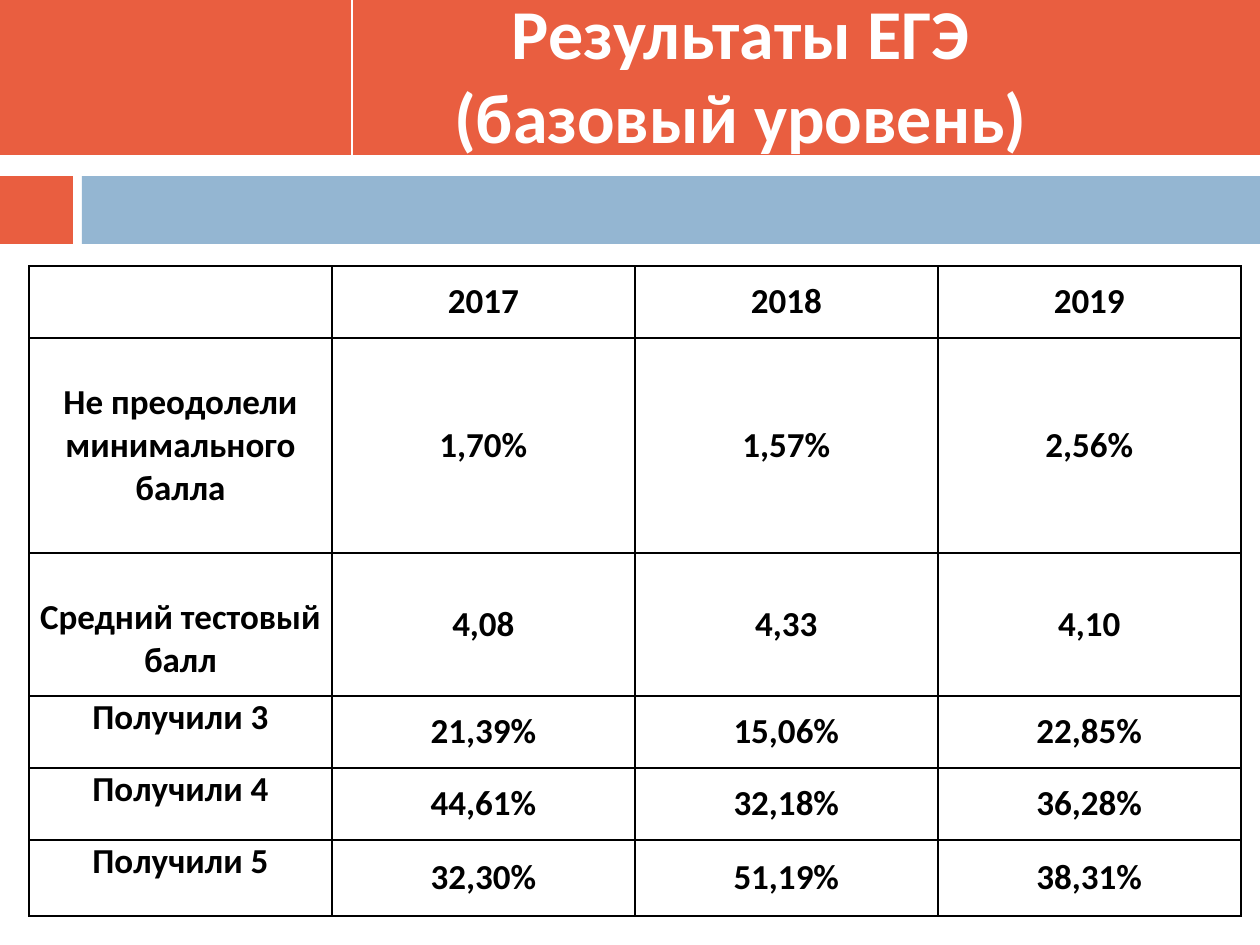
from lxml import etree
from pptx import Presentation
from pptx import util as u
from pptx.dml.color import RGBColor
from pptx.enum import shapes, text
from pptx.oxml import ns

PX = 914400 // 126
ORANGE = RGBColor(0xE9, 0x5E, 0x40)
BLUE = RGBColor(0x94, 0xB6, 0xD2)
WHITE = RGBColor(0xFF, 0xFF, 0xFF)
BLACK = RGBColor(0, 0, 0)


def write(frame, words, size, color):
    para = frame.paragraphs[0]
    para.alignment = text.PP_ALIGN.CENTER
    para.font.size = u.Pt(size)
    if not words:
        return
    span = para.add_run()
    span.text = words
    span.font.name = "Calibri"
    span.font.size = u.Pt(size)
    span.font.bold = True
    span.font.color.rgb = color


def add_borders(cell, color, width):
    props = cell._tc.get_or_add_tcPr()
    for index, side in enumerate(("lnL", "lnR", "lnT", "lnB")):
        line = etree.Element(ns.qn(f"a:{side}"), w=str(u.Pt(width)))
        fill = etree.SubElement(line, ns.qn("a:solidFill"))
        etree.SubElement(fill, ns.qn("a:srgbClr"), val=str(color))
        props.insert(index, line)


deck = Presentation()
deck.slide_width = 1260 * PX
deck.slide_height = 945 * PX
page = deck.slides.add_slide(deck.slide_layouts[6])

# Header bands
bands = [
    (0, 0, 1260, 155, ORANGE),
    (0, 170, 1260, 44, WHITE),
    (0, 176, 73, 68, ORANGE),
    (82, 176, 1178, 68, BLUE),
]
for left, top, width, height, color in bands:
    band = page.shapes.add_shape(
        shapes.MSO_SHAPE.RECTANGLE, left * PX, top * PX, width * PX, height * PX)
    band.shadow.inherit = False
    band.fill.solid()
    band.fill.fore_color.rgb = color
    band.line.fill.background()

# Header divider
divider = page.shapes.add_connector(
    shapes.MSO_CONNECTOR.STRAIGHT, 352 * PX, 0, 352 * PX, 155 * PX)
divider.line.color.rgb = WHITE
divider.line.width = u.Pt(1.5)
etree.SubElement(divider._element.spPr, ns.qn("a:effectLst"))

# Title
title = page.shapes.add_textbox(382 * PX, 6 * PX, 717 * PX, 136 * PX)
title.text_frame.word_wrap = True
title.text_frame.vertical_anchor = text.MSO_ANCHOR.MIDDLE
write(title.text_frame, "Результаты ЕГЭ (базовый уровень)", 40, WHITE)

# Results table
results = [
    ("", "2017", "2018", "2019"),
    ("Не преодолели минимального балла", "1,70%", "1,57%", "2,56%"),
    ("Средний тестовый балл", "4,08", "4,33", "4,10"),
    ("Получили 3", "21,39%", "15,06%", "22,85%"),
    ("Получили 4", "44,61%", "32,18%", "36,28%"),
    ("Получили 5", "32,30%", "51,19%", "38,31%"),
]
row_heights = [72, 215, 143, 72, 72, 76]
label_tops = [0, 43, 43, 0, 0, 0]
column_width = 303

table = page.shapes.add_table(
    len(results), 4, 29 * PX, 266 * PX,
    4 * column_width * PX, sum(row_heights) * PX).table
for column in table.columns:
    column.width = column_width * PX
for row, (values, height) in enumerate(zip(results, row_heights)):
    table.rows[row].height = height * PX
    for col, value in enumerate(values):
        cell = table.cell(row, col)
        cell.fill.background()
        cell.margin_left = cell.margin_right = 9 * PX
        cell.margin_top = label_tops[row] * PX if col == 0 else 0
        cell.margin_bottom = 0
        cell.vertical_anchor = text.MSO_ANCHOR.MIDDLE if col else text.MSO_ANCHOR.TOP
        write(cell.text_frame, value, 20, BLACK)
        add_borders(cell, BLACK, 1)

deck.save("out.pptx")
